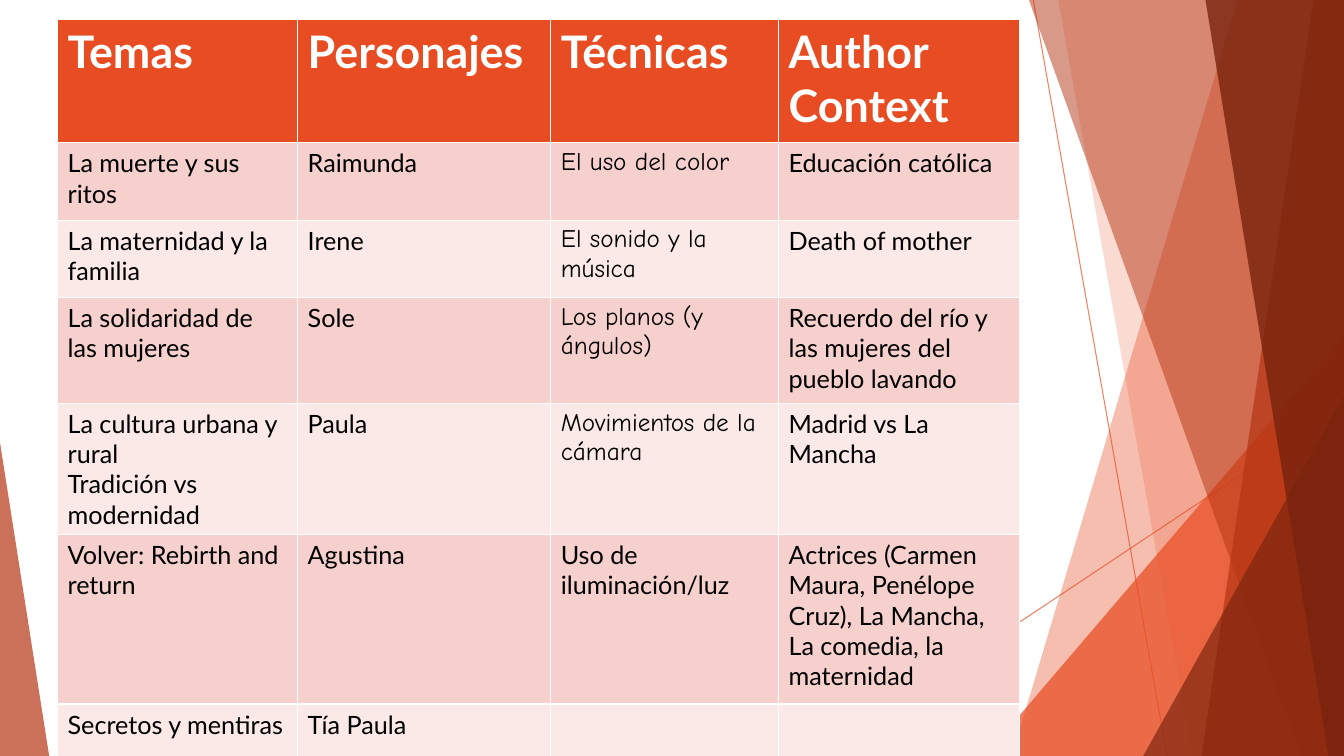
"""Build a slide with a table of film study themes beside a faceted red border."""
from lxml.etree import SubElement
from pptx import Presentation
from pptx.dml.color import RGBColor
from pptx.enum.shapes import MSO_CONNECTOR as CONNECTOR, MSO_SHAPE as SHAPE
from pptx.oxml.ns import qn
from pptx.util import Cm, Pt

ORANGE, RUST, MAROON = "E84C22", "B53513", "78230D"
WIDTH, HEIGHT = 33.87, 19.05


def paint(fill, color, opacity=100):
    fill.solid()
    fill.fore_color.rgb = RGBColor.from_string(color)
    if opacity < 100:
        for node in fill._xPr.iter(qn("a:srgbClr")):
            SubElement(node, qn("a:alpha"), val=str(opacity * 1000))


deck = Presentation()
deck.slide_width, deck.slide_height = Cm(WIDTH), Cm(HEIGHT)
page = deck.slides.add_slide(deck.slide_layouts[6])
shapes = page.shapes

for start_x, start_y, end_x in [(26.04, 0, 29.41), (WIDTH, 10.24, 20.62)]:
    ray = shapes.add_connector(
        CONNECTOR.STRAIGHT, Cm(start_x), Cm(start_y), Cm(end_x), Cm(HEIGHT))
    ray.line.width = Pt(0.75)
    paint(ray.line.fill, ORANGE, 70)
    SubElement(ray._element.spPr, qn("a:effectLst"))

# Bands give top and bottom x; triangles give left, top, width and apex.
facets = [
    ((31.19, 25.5), ORANGE, 36),
    ((26.67, 30.05), ORANGE, 20),
    ((24.82, 8.46, 9.05, 1), ORANGE, 72),
    ((25.93, 32.79), RUST, 50),
    ((33.1, 30.28), RUST, 70),
    ((30.38, 33.48), MAROON, 80),
    ((28.81, 9.98, 5.06, 1), MAROON, 66),
    ((0, 11.15, 1.24, 0), RUST, 70),
]
for outline, color, opacity in facets:
    if len(outline) == 2:
        top_x, bottom_x = outline
        builder = shapes.build_freeform(Cm(top_x), 0)
        corners = [(WIDTH, 0), (WIDTH, HEIGHT), (bottom_x, HEIGHT)]
        builder.add_line_segments([(Cm(x), Cm(y)) for x, y in corners])
        facet = builder.convert_to_shape()
    else:
        left, top, width, apex = outline
        facet = shapes.add_shape(
            SHAPE.ISOSCELES_TRIANGLE, Cm(left), Cm(top), Cm(width), Cm(HEIGHT - top))
        facet.adjustments[0] = apex
    paint(facet.fill, color, opacity)
    facet.line.fill.background()
    facet.shadow.inherit = False

rows = [
    ("Temas", "Personajes", "Técnicas", "Author\nContext"),
    ("La muerte y sus ritos", "Raimunda", "El uso del color", "Educación católica"),
    ("La maternidad y la familia", "Irene", "El sonido y la música", "Death of mother"),
    ("La solidaridad de las mujeres", "Sole", "Los planos (y ángulos)",
     "Recuerdo del río y las mujeres del pueblo lavando"),
    ("La cultura urbana y rural\nTradición vs modernidad", "Paula",
     "Movimientos de la cámara", "Madrid vs La Mancha"),
    ("Volver: Rebirth and return", "Agustina", "Uso de iluminación/luz",
     "Actrices (Carmen Maura, Penélope Cruz), La Mancha,\nLa comedia, la maternidad"),
    ("Secretos y mentiras", "Tía Paula", "", ""),
]
column_widths = [6.05, 6.38, 5.74, 6.07]
row_heights = [3.11, 1.95, 1.95, 2.67, 3.3, 4.27, 1.95]
table = shapes.add_table(
    len(rows), len(column_widths), Cm(1.45), Cm(0.49),
    Cm(sum(column_widths)), Cm(sum(row_heights))).table
for column, width in zip(table.columns, column_widths):
    column.width = Cm(width)
for row, height in zip(table.rows, row_heights):
    row.height = Cm(height)

for row_index, texts in enumerate(rows):
    header = row_index == 0
    band = ORANGE if header else ("FBE9E8", "F6D0CD")[row_index % 2]
    for column_index, text in enumerate(texts):
        cell = table.cell(row_index, column_index)
        paint(cell.fill, band)
        cell.text_frame.text = text
        handwritten = column_index == 2 and 1 <= row_index <= 4
        for para in cell.text_frame.paragraphs:
            for span in para.runs:
                span.font.name = "Comic Neue" if handwritten else "Lato"
                span.font.size = Pt(32 if header else 18)
                span.font.bold = header
                paint(span.font.fill, "FFFFFF" if header else "000000")

deck.save("out.pptx")
